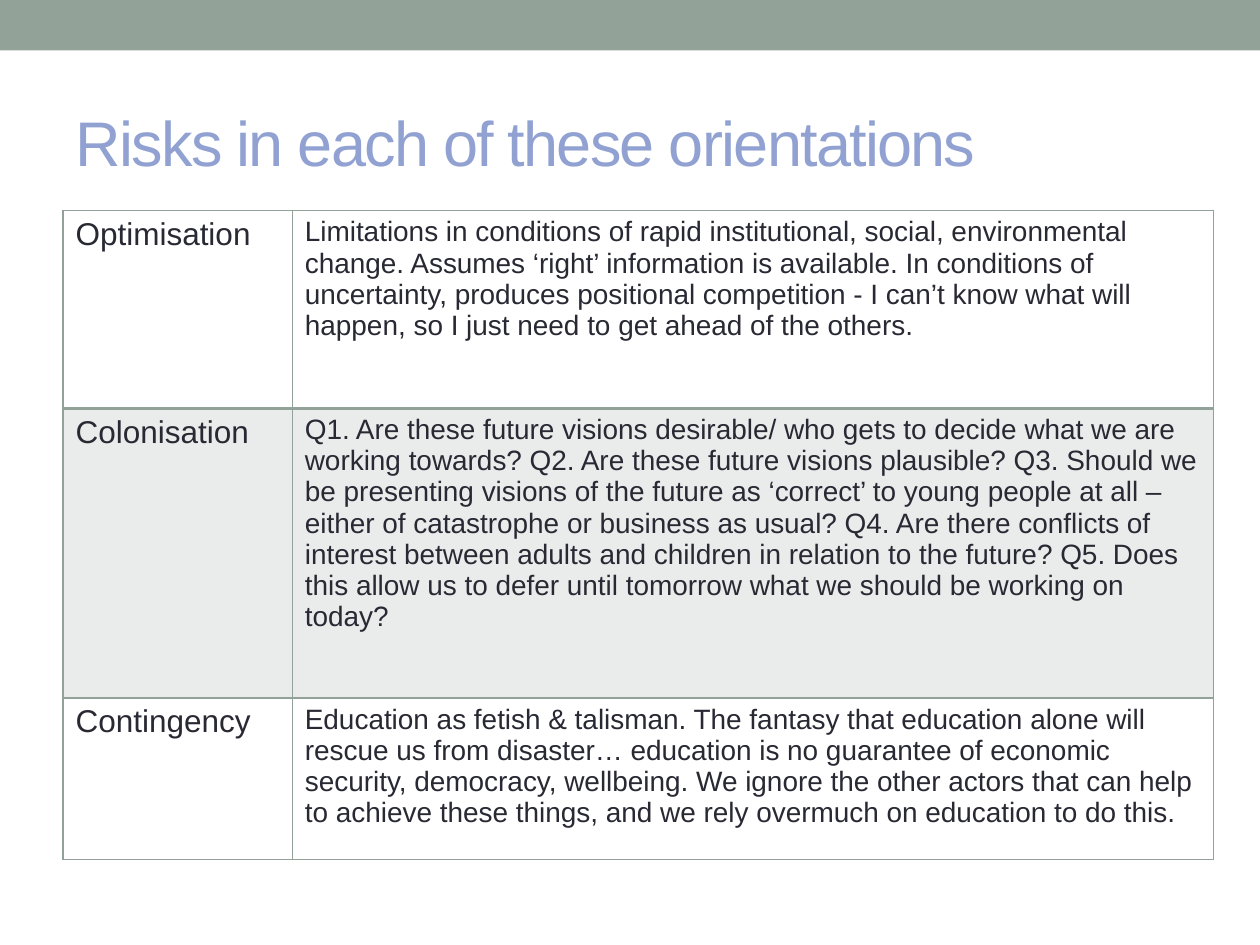
import pptx
import pptx.util
import pptx.dml.color
import pptx.enum.shapes
import pptx.enum.text
import pptx.oxml
import pptx.oxml.ns
from pptx.util import Inches

SAGE = "93A299"
PALE_SAGE = "E9ECEB"
INK = "292934"
PERIWINKLE = "90A1D2"

RISKS = [
    ("Optimisation",
     "Limitations in conditions of rapid institutional, social, environmental change. "
     "Assumes ‘right’ information is available. In conditions of uncertainty, produces "
     "positional competition - I can’t know what will happen, so I just need to get "
     "ahead of the others."),
    ("Colonisation",
     "Q1. Are these future visions desirable/ who gets to decide what we are working "
     "towards? Q2. Are these future visions plausible? Q3. Should we be presenting "
     "visions of the future as ‘correct’ to young people at all – either of catastrophe "
     "or business as usual? Q4. Are there conflicts of interest between adults and "
     "children in relation to the future? Q5. Does this allow us to defer until tomorrow "
     "what we should be working on today?"),
    ("Contingency",
     "Education as fetish & talisman. The fantasy that education alone will rescue us "
     "from disaster… education is no guarantee of economic security, democracy, "
     "wellbeing. We ignore the other actors that can help to achieve these things, and "
     "we rely overmuch on education to do this."),
]


def color(hex_string):
    return pptx.dml.color.RGBColor.from_string(hex_string)


def write(frame, text, size=16, fill=INK, font="Arial", spacing=None):
    para = frame.paragraphs[0]
    para.alignment = pptx.enum.text.PP_ALIGN.LEFT
    span = para.add_run()
    span.text = text
    span.font.name = font
    span.font.size = pptx.util.Pt(size)
    span.font.color.rgb = color(fill)
    if spacing is not None:
        span.font._element.set("spc", str(int(spacing * 100)))


def set_borders(cell, widths):
    """Add the left, right, top and bottom lines, widths in points."""
    properties = cell._tc.get_or_add_tcPr()
    for index, (side, width) in enumerate(zip("LRTB", widths)):
        line = pptx.oxml.parse_xml(
            f'<a:ln{side} {pptx.oxml.ns.nsdecls("a")} w="{pptx.util.Pt(width)}">'
            f'<a:solidFill><a:srgbClr val="{SAGE}"/></a:solidFill></a:ln{side}>')
        properties.insert(index, line)


def add_band(page, left, top, width, height):
    band = page.shapes.add_shape(
        pptx.enum.shapes.MSO_SHAPE.RECTANGLE, left, top, width, height)
    band.shadow.inherit = False
    band.fill.solid()
    band.fill.fore_color.rgb = color(SAGE)
    band.line.fill.background()


def add_title(page, text, left, top, width, height):
    title = page.shapes.title
    title.left, title.top, title.width, title.height = left, top, width, height
    frame = title.text_frame
    frame.word_wrap = True
    frame.vertical_anchor = pptx.enum.text.MSO_ANCHOR.MIDDLE
    write(frame, text, size=36, fill=PERIWINKLE, spacing=-1)


def add_risk_table(page, left, top, width, height):
    table = page.shapes.add_table(len(RISKS), 2, left, top, width, height).table
    table.first_row = False
    table.horz_banding = False
    label_width = Inches(1.82)
    table.columns[0].width = label_width
    table.columns[1].width = width - label_width
    for row, row_height in zip(table.rows, (1.57, 2.3, 1.28)):
        row.height = Inches(row_height)

    for row_index, texts in enumerate(RISKS):
        # The first row is set off by a heavier rule below it
        top_width = 2 if row_index == 1 else 1
        bottom_width = 2 if row_index == 0 else 1
        for column_index, (text, size) in enumerate(zip(texts, (18, 16))):
            cell = table.cell(row_index, column_index)
            if row_index % 2:
                cell.fill.solid()
                cell.fill.fore_color.rgb = color(PALE_SAGE)
            else:
                cell.fill.background()
            set_borders(cell, (1, 1, top_width, bottom_width))
            write(cell.text_frame, text, size=size)


def main():
    deck = pptx.Presentation()
    deck.slide_width, deck.slide_height = Inches(10), Inches(7.5)
    page = deck.slides.add_slide(deck.slide_layouts[5])

    # Band across the top
    add_band(page, 0, 0, deck.slide_width, Inches(0.4))
    # Title
    add_title(page, "Risks in each of these orientations",
              Inches(0.5), Inches(0.58), Inches(9), Inches(1.08))
    # Orientations and their risks
    add_risk_table(page, Inches(0.5), Inches(1.67), Inches(9.13), Inches(5.15))
    deck.save("out.pptx")


if __name__ == "__main__":
    main()
